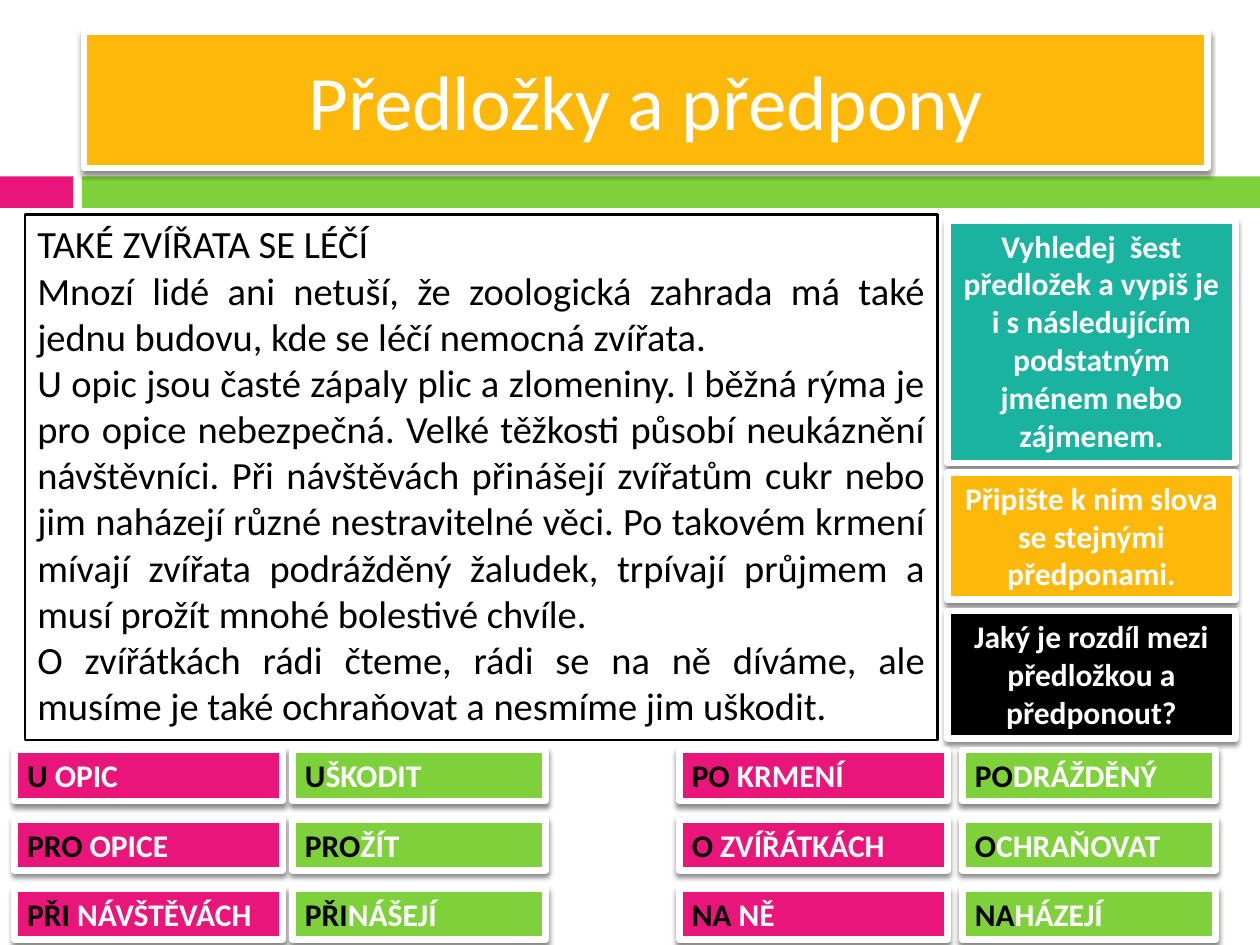
from lxml import etree
from pptx import Presentation
from pptx.dml.color import RGBColor
from pptx.enum.shapes import MSO_SHAPE
from pptx.enum.text import MSO_ANCHOR, MSO_AUTO_SIZE, PP_ALIGN
from pptx.oxml.ns import qn
from pptx.util import Pt

RECTANGLE = MSO_SHAPE.RECTANGLE
TOP, MIDDLE = MSO_ANCHOR.TOP, MSO_ANCHOR.MIDDLE
GROW, FIXED = MSO_AUTO_SIZE.SHAPE_TO_FIT_TEXT, MSO_AUTO_SIZE.NONE
LEFT, CENTER, JUSTIFY = PP_ALIGN.LEFT, PP_ALIGN.CENTER, PP_ALIGN.JUSTIFY

PINK = RGBColor(0xEA, 0x15, 0x7A)
GREEN = RGBColor(0x7F, 0xD1, 0x3B)
AMBER = RGBColor(0xFE, 0xB8, 0x0A)
TEAL = RGBColor(0x1A, 0xB3, 0x9F)
BLACK = RGBColor(0, 0, 0)
WHITE = RGBColor(0xFF, 0xFF, 0xFF)
FONT = "Calibri"

HEADING = "Předložky a předpony"
STORY = [
    "TAKÉ ZVÍŘATA SE LÉČÍ",
    "Mnozí lidé ani netuší, že zoologická zahrada má také jednu budovu, "
    "kde se léčí nemocná zvířata.",
    "U opic jsou časté zápaly plic a zlomeniny. I běžná rýma je pro opice "
    "nebezpečná. Velké těžkosti působí neukáznění návštěvníci. Při návštěvách "
    "přinášejí zvířatům cukr nebo jim naházejí různé nestravitelné věci. Po "
    "takovém krmení mívají zvířata podrážděný žaludek, trpívají průjmem a musí "
    "prožít mnohé bolestivé chvíle.",
    "O zvířátkách rádi čteme, rádi se na ně díváme, ale musíme je také "
    "ochraňovat a nesmíme jim uškodit.",
]
# Task text, fill, top offset, height
TASKS = [
    ("Vyhledej  šest předložek a vypiš je i s následujícím podstatným jménem "
     "nebo zájmenem.", TEAL, 0, 138.5),
    ("Připište k nim slova se stejnými předponami.", AMBER, 144, 72.7),
    ("Jaký je rozdíl mezi předložkou a předponout?", BLACK, 223.2, 72.7),
]
# Shared beginning, rest of the prepositional phrase, rest of the prefixed word
LEFT_ANSWERS = [("U", " OPIC", "ŠKODIT"), ("PRO", " OPICE", "ŽÍT"),
                ("PŘI", " NÁVŠTĚVÁCH", "NÁŠEJÍ")]
RIGHT_ANSWERS = [("PO", " KRMENÍ", "DRÁŽDĚNÝ"), ("O", " ZVÍŘÁTKÁCH", "CHRAŇOVAT"),
                 ("NA", " NĚ", "HÁZEJÍ")]


def add_box(slide, box, fill):
    shape = slide.shapes.add_shape(RECTANGLE, *map(Pt, box))
    shape.shadow.inherit = False
    shape.fill.solid()
    shape.fill.fore_color.rgb = fill
    shape.line.fill.background()
    return shape


def outline(shape, color, width):
    shape.line.color.rgb = color
    shape.line.width = Pt(width)


def frame_card(shape):
    """White frame with a soft shadow below."""
    outline(shape, WHITE, 3.75)
    shape.shadow.inherit = False
    effects = shape.element.spPr.find(qn("a:effectLst"))
    shadow = etree.SubElement(effects, qn("a:outerShdw"), blurRad=str(Pt(3)),
                              dist=str(Pt(2.4)), dir="5400000", rotWithShape="0")
    color = etree.SubElement(shadow, qn("a:srgbClr"), val="000000")
    etree.SubElement(color, qn("a:alpha"), val="45000")


def write(shape, paragraphs, size, align, bold=False, anchor=TOP, auto_size=GROW):
    """Each paragraph is a list of (text, color) runs."""
    frame = shape.text_frame
    frame.word_wrap = True
    frame.auto_size = auto_size
    frame.vertical_anchor = anchor
    for index, runs in enumerate(paragraphs):
        paragraph = frame.add_paragraph() if index else frame.paragraphs[0]
        paragraph.alignment = align
        for text, color in runs:
            run = paragraph.add_run()
            run.text = text
            run.font.name = FONT
            run.font.size = Pt(size)
            run.font.bold = bold
            run.font.color.rgb = color


def add_band(slide, left, top, width, height):
    stub, gap = 41.8, 5
    add_box(slide, (left, top, stub, height), PINK)
    add_box(slide, (left + stub + gap, top, width - stub - gap, height), GREEN)


def place_heading(slide, left, top, width, height):
    title = slide.shapes.title
    title.left, title.top, title.width, title.height = map(
        Pt, (left, top, width, height))
    title.fill.solid()
    title.fill.fore_color.rgb = AMBER
    frame_card(title)
    write(title, [[(HEADING, WHITE)]], 44, CENTER, anchor=MIDDLE, auto_size=FIXED)
    # Bring the heading in front of the band
    title.element.getparent().append(title.element)


def add_story(slide, *box):
    story = add_box(slide, box, WHITE)
    outline(story, BLACK, 1.5)
    write(story, [[(text, BLACK)] for text in STORY], 22, JUSTIFY)


def add_tasks(slide, left, top, width):
    for text, fill, offset, height in TASKS:
        card = add_box(slide, (left, top + offset, width, height), fill)
        frame_card(card)
        write(card, [[(text, WHITE)]], 18, CENTER, bold=True)


def add_answers(slide, answers, left, word_left, top):
    height, pitch = 29.1, 39.6
    for row, (start, phrase_rest, word_rest) in enumerate(answers):
        for x, width, fill, rest in ((left, 153.1, PINK, phrase_rest),
                                     (word_left, 144.6, GREEN, word_rest)):
            card = add_box(slide, (x, top + row * pitch, width, height), fill)
            frame_card(card)
            write(card, [[(start, BLACK), (rest, WHITE)]], 18, LEFT, bold=True)


def main():
    presentation = Presentation()
    presentation.slide_width, presentation.slide_height = Pt(720), Pt(540)
    slide = presentation.slides.add_slide(presentation.slide_layouts[5])

    add_band(slide, 0, 100.8, 720, 18)
    place_heading(slide, 48, 18, 642, 78)
    add_story(slide, 14.2, 122.4, 521.6, 300.4)
    add_tasks(slide, 541.5, 126, 164.4)
    add_answers(slide, LEFT_ANSWERS, 8.4, 167.2, 428.6)
    add_answers(slide, RIGHT_ANSWERS, 388.2, 550, 428.6)

    presentation.save("out.pptx")


if __name__ == "__main__":
    main()
